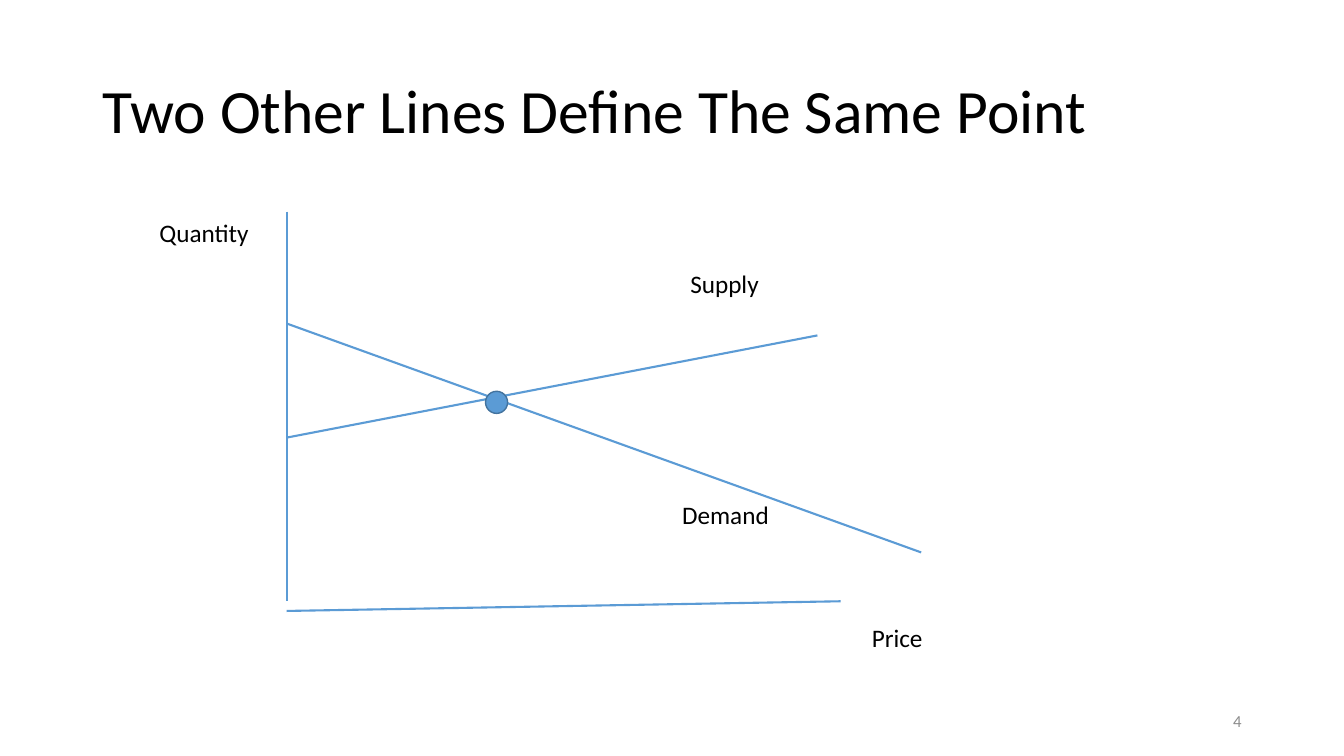
from lxml import etree
from pptx import Presentation
from pptx.dml.color import RGBColor
from pptx.enum import shapes, text
from pptx.oxml import ns
from pptx.util import Pt

BLUE, DARK_BLUE, BLACK, GREY = "5B9BD5", "43739E", "000000", "8C8C8C"
AXIS_X = 204.8

QUANTITY_AXIS = (AXIS_X, 151.2, AXIS_X, 429.5)
PRICE_AXIS = (600.5, 429.5, AXIS_X, 436.4)
DEMAND_LINE = (AXIS_X, 231.1, 658, 394.6)
SUPPLY_LINE = (583.9, 239.6, AXIS_X, 312.6)
LABELS = {
    "Supply": (486, 187.9, 227.5, 28.8),
    "Demand": (480.2, 353.2, 112.3, 28.8),
    "Price": (615.6, 441, 97.2, 28.8),
    "Quantity": (106.8, 151.5, 92.2, 28.8),
}


def color(hex_value):
    return RGBColor.from_string(hex_value)


def points(*lengths):
    return [Pt(length) for length in lengths]


def write(frame, words, size, hex_value=BLACK, **paragraph_format):
    frame.word_wrap = True
    paragraph = frame.paragraphs[0]
    for name, value in paragraph_format.items():
        setattr(paragraph, name, value)
    run = paragraph.add_run()
    run.text = words
    for name, value in {"name": "Calibri", "size": Pt(size)}.items():
        setattr(run.font, name, value)
    run.font.color.rgb = color(hex_value)


def set_title(slide, words):
    title = slide.shapes.title
    title.left, title.top, title.width, title.height = points(66.2, 28.8, 828, 104.4)
    title.text_frame.vertical_anchor = text.MSO_ANCHOR.MIDDLE
    write(title.text_frame, words, 44, line_spacing=0.9,
          alignment=text.PP_ALIGN.LEFT)


def add_line(slide, ends):
    line = slide.shapes.add_connector(shapes.MSO_CONNECTOR.STRAIGHT, *points(*ends))
    line.line.color.rgb = color(BLUE)
    line.line.width = Pt(1.5)
    properties = line.element.find(ns.qn("p:spPr"))
    etree.SubElement(properties, ns.qn("a:effectLst"))


def add_dot(slide, left, top, diameter):
    dot = slide.shapes.add_shape(
        shapes.MSO_SHAPE.OVAL, *points(left, top, diameter, diameter))
    dot.shadow.inherit = False
    dot.fill.solid()
    dot.fill.fore_color.rgb = color(BLUE)
    dot.line.color.rgb = color(DARK_BLUE)
    dot.line.width = Pt(1)


def add_label(slide, words, box, size=18, hex_value=BLACK,
              anchor=text.MSO_ANCHOR.TOP, **paragraph_format):
    frame = slide.shapes.add_textbox(*points(*box)).text_frame
    frame.vertical_anchor = anchor
    write(frame, words, size, hex_value, **paragraph_format)


def main():
    presentation = Presentation()
    presentation.slide_width, presentation.slide_height = points(960, 540)
    slide = presentation.slides.add_slide(
        presentation.slide_layouts.get_by_name("Title Only"))
    set_title(slide, "Two Other Lines Define The Same Point")
    for ends in (QUANTITY_AXIS, PRICE_AXIS, DEMAND_LINE, SUPPLY_LINE):
        add_line(slide, ends)
    add_dot(slide, 346.8, 279.5, 15.8)
    for words, box in LABELS.items():
        add_label(slide, words, box)
    add_label(slide, "4", (678, 500.4, 216, 28.8), 12, GREY,
              text.MSO_ANCHOR.MIDDLE, alignment=text.PP_ALIGN.RIGHT)
    presentation.save("out.pptx")


if __name__ == "__main__":
    main()
